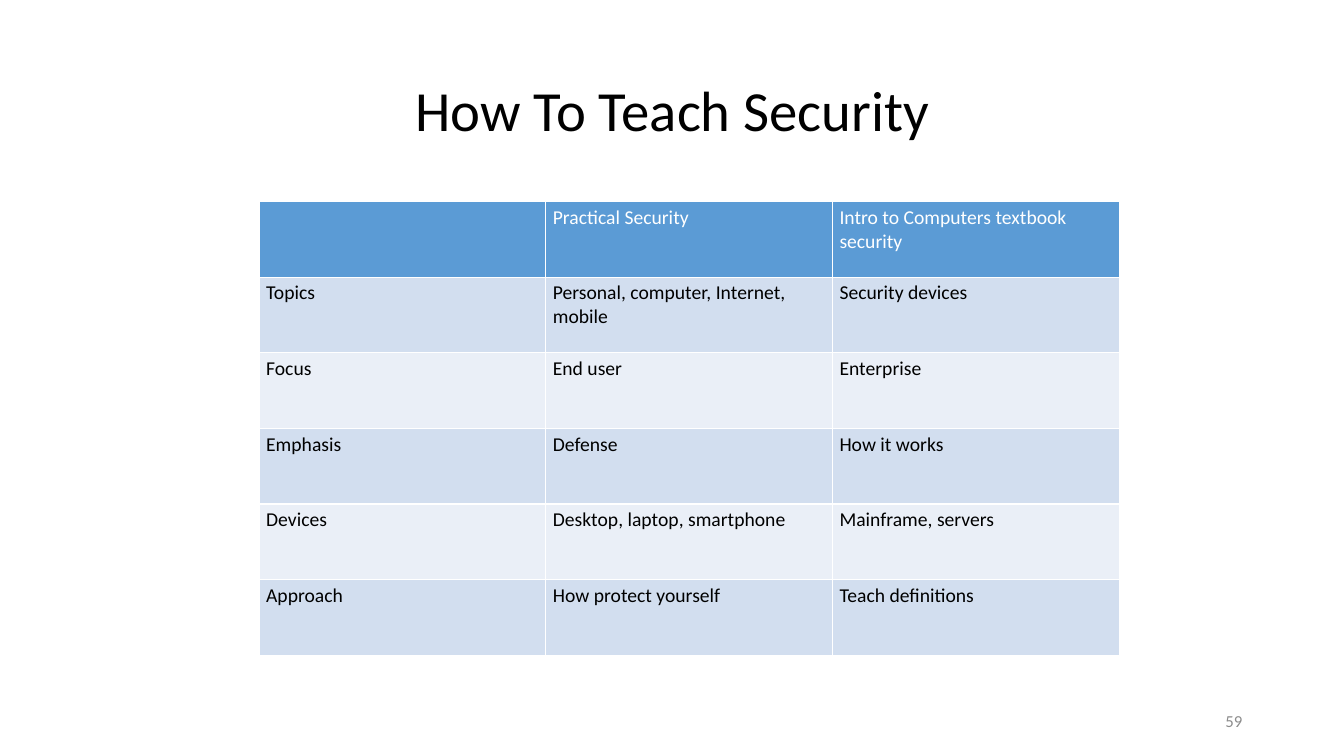
import pptx
import pptx.dml.color
import pptx.enum.text
import pptx.oxml
import pptx.oxml.ns
import pptx.util
from dataclasses import dataclass

Inches = pptx.util.Inches
Align = pptx.enum.text.PP_ALIGN


@dataclass(frozen=True)
class Theme:
    font: str = "Calibri"
    ink: str = "000000"
    white: str = "FFFFFF"
    gray: str = "8C8C8C"
    head: str = "5B9BD5"
    bands: tuple = ("D2DEEF", "EAEFF7")
    title: float = 40.5
    body: float = 14
    small: float = 12
    rule: float = 1


THEME = Theme()

ROWS = [
    ("", "Practical Security", "Intro to Computers textbook security"),
    ("Topics", "Personal, computer, Internet, mobile", "Security devices"),
    ("Focus", "End user", "Enterprise"),
    ("Emphasis", "Defense", "How it works"),
    ("Devices", "Desktop, laptop, smartphone", "Mainframe, servers"),
    ("Approach", "How protect yourself", "Teach definitions"),
]


def rgb(color):
    return pptx.dml.color.RGBColor.from_string(color)


def style(frame, size, color):
    for para in frame.paragraphs:
        for run in para.runs:
            font = run.font
            font.name = THEME.font
            font.size = pptx.util.Pt(size)
            font.bold = False
            font.color.rgb = rgb(color)


def add_text(slide, text, box, size, color, align, space=1.0):
    frame = slide.shapes.add_textbox(*map(Inches, box)).text_frame
    frame.word_wrap = True
    frame.vertical_anchor = pptx.enum.text.MSO_ANCHOR.MIDDLE
    frame.text = text
    frame.paragraphs[0].alignment = align
    frame.paragraphs[0].line_spacing = space
    style(frame, size, color)


def add_rules(cell):
    """Draw the four thin borders of a cell."""
    props = cell._tc.get_or_add_tcPr()
    width = pptx.util.Pt(THEME.rule)
    for side in "LRTB":
        props.append(pptx.oxml.parse_xml(
            f'<a:ln{side} {pptx.oxml.ns.nsdecls("a")} w="{width}"><a:solidFill>'
            f'<a:srgbClr val="{THEME.white}"/></a:solidFill></a:ln{side}>'))


def fill_cell(cell, text, fill, color):
    cell.margin_left = cell.margin_right = Inches(0.07)
    cell.margin_top = cell.margin_bottom = Inches(0.04)
    add_rules(cell)
    cell.fill.solid()
    cell.fill.fore_color.rgb = rgb(fill)
    cell.text_frame.text = text
    style(cell.text_frame, THEME.body, color)


def add_grid(slide, rows, box):
    # Equal rows and columns share the frame
    table = slide.shapes.add_table(
        len(rows), len(rows[0]), *map(Inches, box)).table
    table.first_row = table.horz_banding = False
    for r, row in enumerate(rows):
        head = r == 0
        fill = THEME.head if head else THEME.bands[(r - 1) % 2]
        color = THEME.white if head else THEME.ink
        for c, text in enumerate(row):
            fill_cell(table.cell(r, c), text, fill, color)


def main():
    deck = pptx.Presentation()
    deck.slide_width, deck.slide_height = Inches(13.33), Inches(7.5)
    slide = deck.slides.add_slide(deck.slide_layouts[6])

    # Title
    add_text(slide, "How To Teach Security", (0.92, 0.4, 11.5, 1.45),
             THEME.title, THEME.ink, Align.CENTER, 0.9)
    # Comparison table
    add_grid(slide, ROWS, (2.57, 2, 8.53, 4.5))
    # Page number
    add_text(slide, "59", (9.42, 6.95, 3, 0.4),
             THEME.small, THEME.gray, Align.RIGHT)

    deck.save("out.pptx")


if __name__ == "__main__":
    main()
